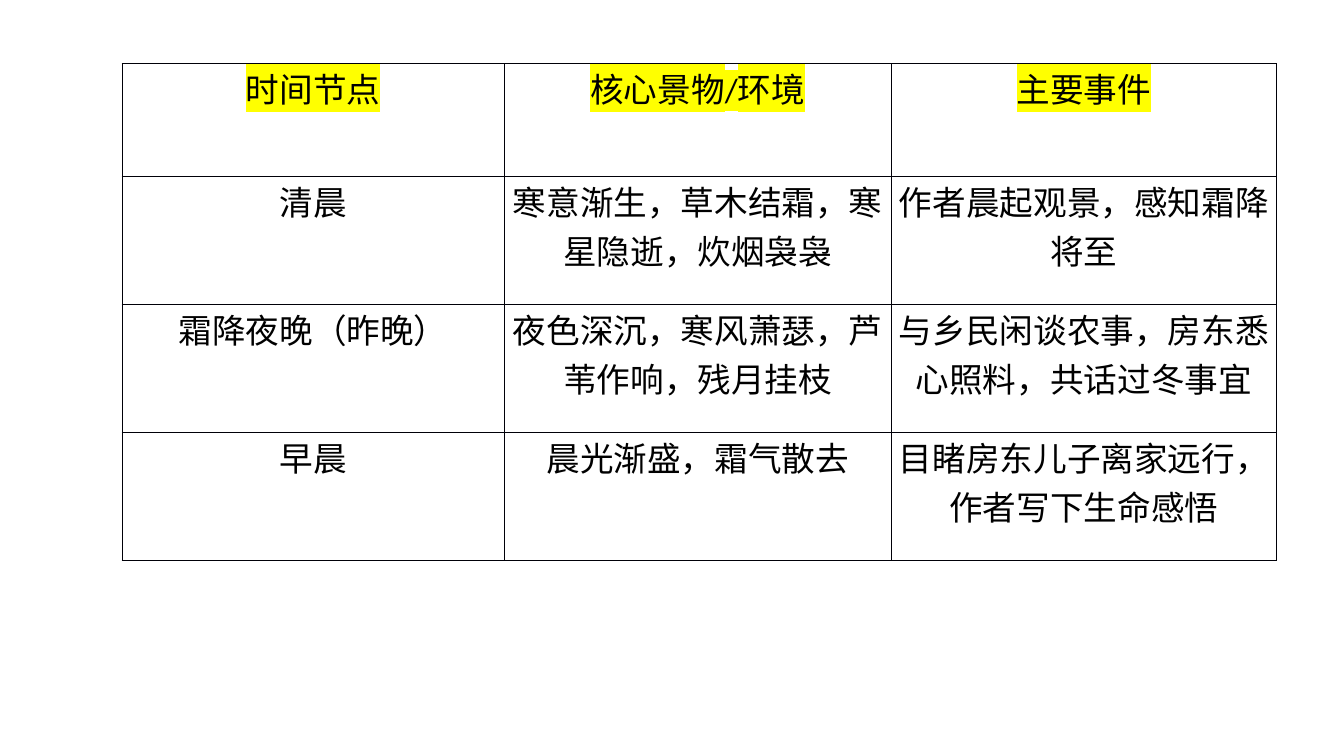
from lxml import etree
from pptx import Presentation
from pptx import util as u
from pptx.dml.color import RGBColor
from pptx.enum import text
from pptx.oxml.ns import qn

# Content: header row, then one row per moment
ROWS = [
    ("时间节点", "核心景物/环境", "主要事件"),
    ("清晨", "寒意渐生，草木结霜，寒星隐逝，炊烟袅袅", "作者晨起观景，感知霜降将至"),
    ("霜降夜晚（昨晚）", "夜色深沉，寒风萧瑟，芦苇作响，残月挂枝",
     "与乡民闲谈农事，房东悉心照料，共话过冬事宜"),
    ("早晨", "晨光渐盛，霜气散去", "目睹房东儿子离家远行，作者写下生命感悟"),
]

# Grid, in inches
LEFT, TOP = 1.21, 0.63
COLUMN_WIDTHS = [3.79, 3.84, 3.82]
HEADER_HEIGHT, BODY_HEIGHT = 1.12, 1.27
ROW_HEIGHTS = [HEADER_HEIGHT] + [BODY_HEIGHT] * (len(ROWS) - 1)
SIDE_MARGIN = 0.07

FONT, FONT_SIZE, BORDER_WIDTH = "Calibri", 24, 0.5
BLACK = RGBColor(0x00, 0x00, 0x00)
BORDER = RGBColor(0x00, 0x00, 0x08)
YELLOW = RGBColor(0xFF, 0xFF, 0x00)


def add_color(parent, color):
    etree.SubElement(parent, qn("a:srgbClr"), val=str(color))


def add_borders(cell):
    properties = cell._tc.get_or_add_tcPr()
    for position, side in enumerate(("lnL", "lnR", "lnT", "lnB")):
        line = etree.Element(qn("a:" + side), w=str(u.Pt(BORDER_WIDTH)))
        add_color(etree.SubElement(line, qn("a:solidFill")), BORDER)
        properties.insert(position, line)


def fill_cell(cell, wording, is_header):
    cell.margin_left = cell.margin_right = u.Inches(SIDE_MARGIN)
    cell.margin_top = cell.margin_bottom = 0
    cell.vertical_anchor = text.MSO_ANCHOR.TOP
    cell.fill.background()
    add_borders(cell)

    cell.text_frame.text = wording
    paragraph = cell.text_frame.paragraphs[0]
    paragraph.alignment = text.PP_ALIGN.CENTER
    run = paragraph.runs[0]
    run.font.size = u.Pt(FONT_SIZE)
    run.font.bold = False
    run.font.color.rgb = BLACK
    if is_header:
        highlight = etree.SubElement(run._r.get_or_add_rPr(), qn("a:highlight"))
        add_color(highlight, YELLOW)
    run.font.name = FONT


def main():
    presentation = Presentation()
    presentation.slide_width = u.Inches(13.33)
    presentation.slide_height = u.Inches(7.5)
    slide = presentation.slides.add_slide(presentation.slide_layouts[6])

    # Table of times, scenery and events
    frame = slide.shapes.add_table(
        len(ROWS), len(COLUMN_WIDTHS), u.Inches(LEFT), u.Inches(TOP),
        u.Inches(sum(COLUMN_WIDTHS)), u.Inches(sum(ROW_HEIGHTS)))
    table = frame.table
    table.first_row = table.horz_banding = False
    for column, width in zip(table.columns, COLUMN_WIDTHS):
        column.width = u.Inches(width)
    for index, (row, height) in enumerate(zip(table.rows, ROW_HEIGHTS)):
        row.height = u.Inches(height)
        for cell, wording in zip(row.cells, ROWS[index]):
            fill_cell(cell, wording, index == 0)

    presentation.save("out.pptx")


if __name__ == "__main__":
    main()
